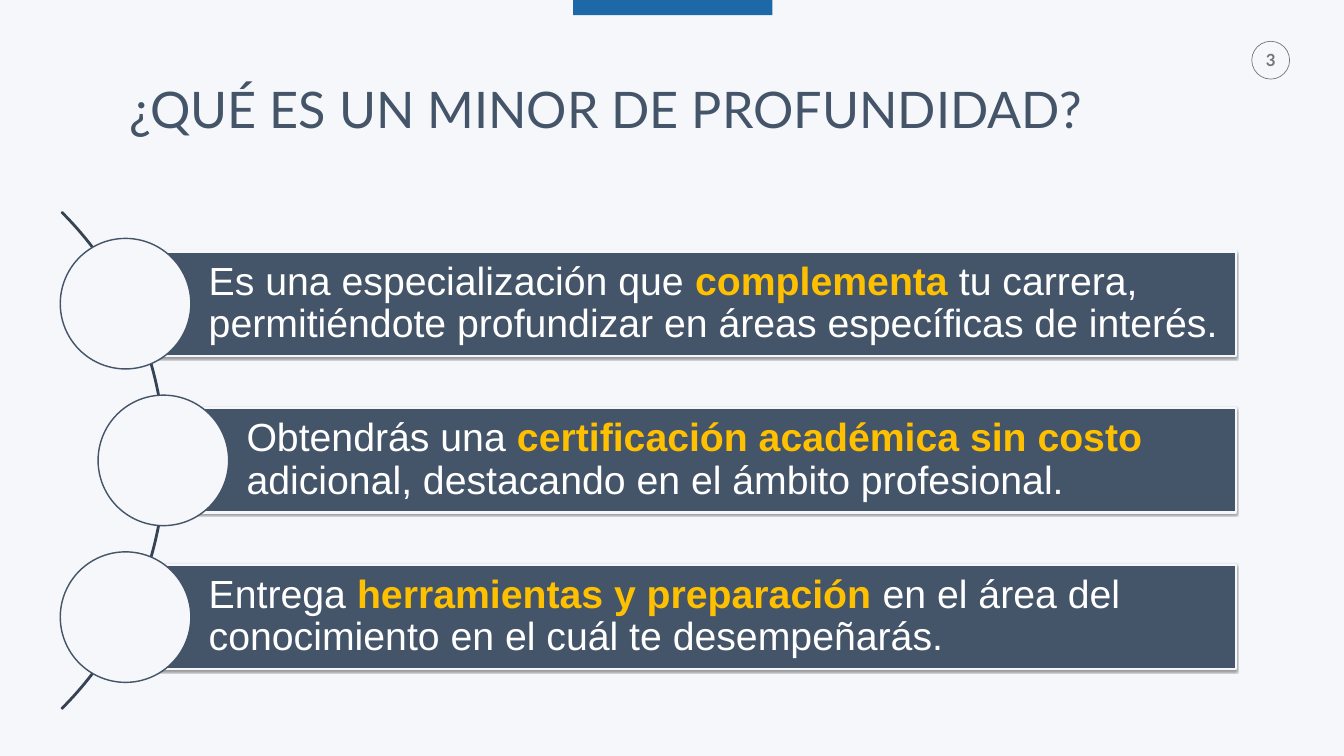
from dataclasses import dataclass

from lxml.etree import SubElement
from pptx import Presentation
from pptx.dml.color import RGBColor as Rgb
from pptx.enum.shapes import MSO_SHAPE as Shape
from pptx.enum.text import MSO_ANCHOR as Anchor, MSO_AUTO_SIZE as AutoSize, PP_ALIGN as Align
from pptx.oxml.ns import qn
from pptx.util import Pt


@dataclass(frozen=True)
class Theme:
    paper: str = "F6F7FA"
    slate: str = "445469"
    arc: str = "364354"
    accent: str = "1D68A6"
    muted: str = "737572"
    white: str = "FFFFFF"
    highlight: str = "FFC000"
    shadow: str = "000000"
    heading_font: str = "Lato"
    body_font: str = "Arial"
    title_size: int = 72
    body_size: int = 56
    number_size: int = 24


class SlideBuilder:
    def __init__(self, slide, theme):
        self.slide = slide
        self.theme = theme
        slide.background.fill.solid()
        slide.background.fill.fore_color.rgb = Rgb.from_string(theme.paper)

    def shape(self, preset, left, top, width, height, fill=None, line=None, weight=1):
        item = self.slide.shapes.add_shape(preset, Pt(left), Pt(top), Pt(width), Pt(height))
        item.shadow.inherit = False
        if fill:
            item.fill.solid()
            item.fill.fore_color.rgb = Rgb.from_string(fill)
        else:
            item.fill.background()
        if line:
            item.line.color.rgb = Rgb.from_string(line)
            item.line.width = Pt(weight)
        else:
            item.line.fill.background()
        return item

    def circle(self, center_x, center_y, diameter, **style):
        radius = diameter / 2
        return self.shape(Shape.OVAL, center_x - radius, center_y - radius,
                          diameter, diameter, **style)

    def arc(self, center_x, center_y, diameter, color, weight):
        radius = diameter / 2
        band = self.shape(Shape.BLOCK_ARC, center_x - radius, center_y - radius,
                          diameter, diameter, line=color, weight=weight)
        for index, value in enumerate((189, 27, 0.002)):
            band.adjustments[index] = value

    def drop_shadow(self, item):
        effects = item._element.spPr.find(qn("a:effectLst"))
        outer = SubElement(effects, qn("a:outerShdw"), blurRad=str(Pt(3.1)),
                           dist=str(Pt(1.6)), dir="5400000", rotWithShape="0")
        color = SubElement(outer, qn("a:srgbClr"), val=self.theme.shadow)
        SubElement(color, qn("a:alpha"), val="38000")

    def text(self, item, runs, font, size, insets, align=Align.LEFT,
             anchor=Anchor.MIDDLE, spacing=1.0):
        frame = item.text_frame
        frame.word_wrap = True
        frame.auto_size = AutoSize.NONE
        frame.vertical_anchor = anchor
        frame.margin_left, frame.margin_top, frame.margin_right, frame.margin_bottom = map(Pt, insets)
        paragraph = frame.paragraphs[0]
        paragraph.alignment = align
        paragraph.line_spacing = spacing
        for words, color, bold in runs:
            run = paragraph.add_run()
            run.text = words
            run.font.name = font
            run.font.size = Pt(size)
            run.font.bold = bold
            run.font.color.rgb = Rgb.from_string(color)

    def title(self, words, left, top, width, height):
        heading = self.slide.shapes.title
        heading.left, heading.top = Pt(left), Pt(top)
        heading.width, heading.height = Pt(width), Pt(height)
        self.text(heading, [(words, self.theme.slate, False)], self.theme.heading_font,
                  self.theme.title_size, (7.2, 3.6, 7.2, 3.6), anchor=Anchor.TOP)

    def page_number(self, number, center_x, center_y, diameter):
        badge = self.circle(center_x, center_y, diameter, line=self.theme.muted)
        self.text(badge, [(number, self.theme.muted, True)], self.theme.heading_font,
                  self.theme.number_size, (0, 0, 0, 0), Align.CENTER)

    def statement(self, before, emphasis, after, left, right, center_y, height, diameter):
        theme = self.theme
        bar = self.shape(Shape.RECTANGLE, left, center_y - height / 2, right - left, height,
                         fill=theme.slate, line=theme.paper, weight=3)
        self.drop_shadow(bar)
        runs = [(before, theme.white, False), (emphasis, theme.highlight, True),
                (after, theme.white, False)]
        self.text(bar, runs, theme.body_font, theme.body_size,
                  (118.8, 11.5, 11.5, 11.5), spacing=0.9)
        self.circle(left, center_y, diameter, fill=theme.paper, line=theme.slate, weight=2)


STATEMENTS = [
    ("Es una especialización que ", "complementa",
     " tu carrera, permitiéndote profundizar en áreas específicas de interés."),
    ("Obtendrás una ", "certificación académica sin costo ",
     "adicional, destacando en el ámbito profesional."),
    ("Entrega ", "herramientas y preparación ",
     "en el área del conocimiento en el cuál te desempeñarás."),
]


def main():
    deck = Presentation()
    deck.slide_width, deck.slide_height = Pt(1919.52), Pt(1080)
    theme = Theme()
    builder = SlideBuilder(deck.slides.add_slide(deck.slide_layouts[5]), theme)

    builder.page_number("3", 1814.8, 86, 54)
    builder.shape(Shape.RECTANGLE, 818.6, 0, 284.4, 21.6, fill=theme.accent)
    builder.title("¿QUÉ ES UN MINOR DE PROFUNDIDAD?", 177.8, 107.3, 1433.5, 94.3)

    middle, step = 657.7, 223.9
    outer_left, inner_left = 179.3, 233.3
    builder.arc(-266, middle, 1004.4, theme.arc, 2)
    for row, (before, emphasis, after) in enumerate(STATEMENTS):
        left = inner_left if row == 1 else outer_left
        builder.statement(before, emphasis, after, left, 1764.7,
                          middle + (row - 1) * step, 149, 186.5)

    deck.save("out.pptx")


if __name__ == "__main__":
    main()
